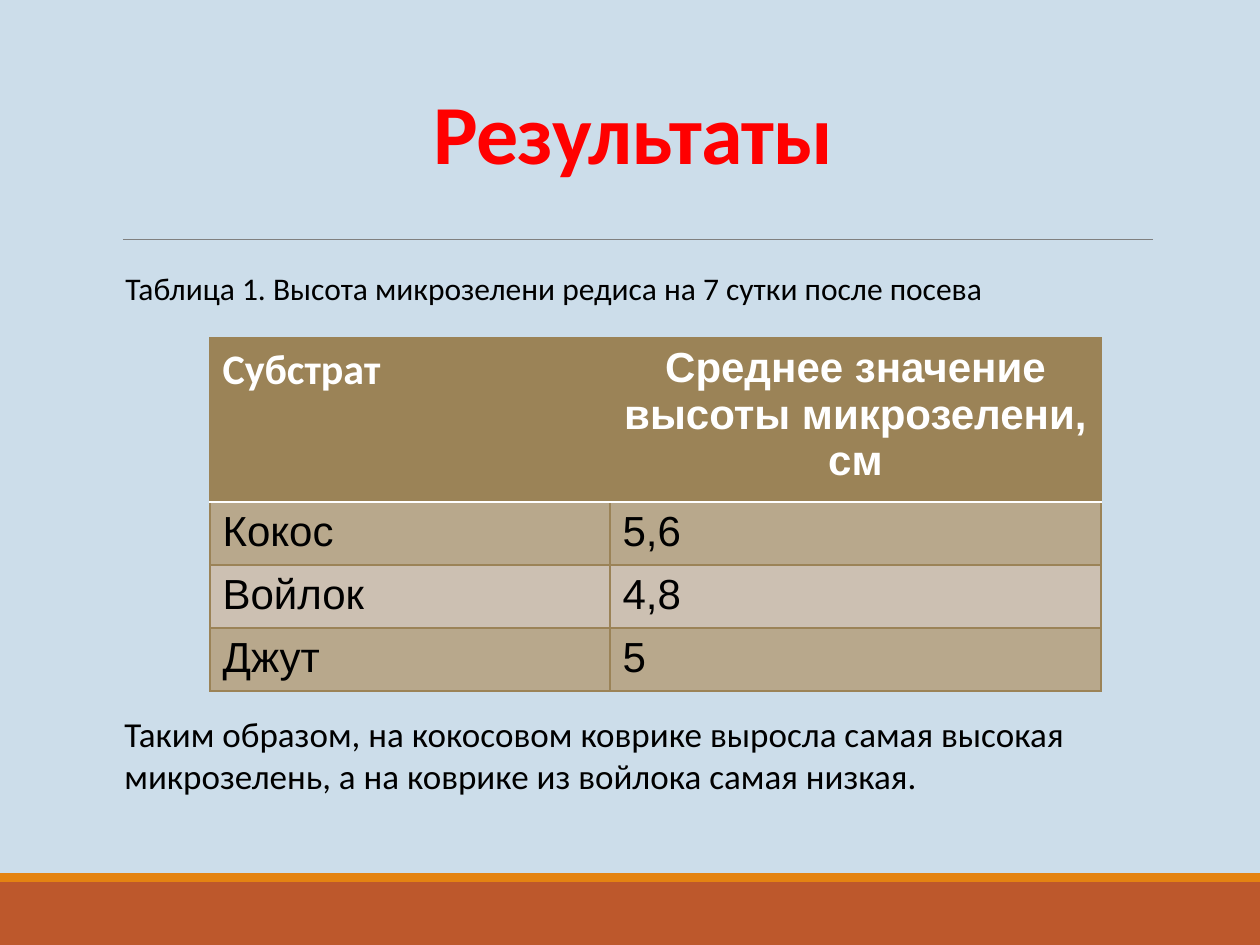
from dataclasses import dataclass

from lxml import etree
from pptx import Presentation
from pptx.dml.color import RGBColor
from pptx.enum.shapes import MSO_CONNECTOR, MSO_SHAPE
from pptx.enum.text import MSO_ANCHOR, PP_ALIGN
from pptx.oxml.ns import qn
from pptx.util import Emu, Pt

LEFT, CENTER = PP_ALIGN.LEFT, PP_ALIGN.CENTER
TOP, MIDDLE = MSO_ANCHOR.TOP, MSO_ANCHOR.MIDDLE
RECTANGLE, STRAIGHT = MSO_SHAPE.RECTANGLE, MSO_CONNECTOR.STRAIGHT
EMU_PER_PX = 914400 / 126
BROWN, WHITE, BLACK = "9B8357", "FFFFFF", "000000"
ROW_FILLS = ("B8A88C", "CCC0B2")


@dataclass
class Band:
    top: int
    height: int
    color: str


@dataclass
class Style:
    size: int
    font: str = "Calibri"
    color: str = BLACK
    bold: bool = False
    align: PP_ALIGN = LEFT


@dataclass
class Caption:
    left: int
    top: int
    width: int
    height: int
    text: str
    style: Style
    wrap: bool = True
    anchor: MSO_ANCHOR = TOP


BANDS = (Band(882, 63, "BD582C"), Band(873, 9, "E48312"))
TITLE = Caption(113, 39, 1040, 200, "Результаты",
                Style(48, color="FF0000", bold=True, align=CENTER), anchor=MIDDLE)
NOTES = (
    Caption(113, 263, 886, 50,
            "Таблица 1. Высота микрозелени редиса на 7 сутки после посева",
            Style(18), wrap=False),
    Caption(112, 706, 1086, 97,
            "Таким образом, на кокосовом коврике выросла самая высокая "
            "микрозелень, а на коврике из войлока самая низкая.", Style(20)),
)
HEADERS = (
    ("Субстрат", Style(24, color=WHITE, bold=True)),
    ("Среднее значение высоты микрозелени, см",
     Style(24, "Arial", WHITE, True, CENTER)),
)
RESULTS = (("Кокос", "5,6"), ("Войлок", "4,8"), ("Джут", "5"))
COLUMNS = (400, 491)
ROWS = (153, 60, 60, 60)


def px(value: int) -> Emu:
    return Emu(round(value * EMU_PER_PX))


def rgb(color: str) -> RGBColor:
    return RGBColor.from_string(color)


def add_span(para, text: str, style: Style):
    para.alignment = style.align
    span = para.add_run()
    span.text = text
    span.font.size = Pt(style.size)
    span.font.name = style.font
    span.font.bold = style.bold
    span.font.color.rgb = rgb(style.color)
    return span


def draw_band(page, band: Band) -> None:
    bar = page.shapes.add_shape(RECTANGLE, 0, px(band.top), px(1260), px(band.height))
    bar.shadow.inherit = False
    bar.fill.solid()
    bar.fill.fore_color.rgb = rgb(band.color)
    bar.line.fill.background()


def draw_rule(page) -> None:
    rule = page.shapes.add_connector(STRAIGHT, px(123), px(239), px(1153), px(239))
    rule.line.color.rgb = rgb("808080")
    rule.line.width = Pt(0.5)
    etree.SubElement(rule._element.spPr, qn("a:effectLst"))


def draw_caption(page, caption: Caption):
    box = page.shapes.add_textbox(px(caption.left), px(caption.top),
                                  px(caption.width), px(caption.height))
    frame = box.text_frame
    frame.word_wrap = caption.wrap
    frame.vertical_anchor = caption.anchor
    para = frame.paragraphs[0]
    return para, add_span(para, caption.text, caption.style)


def draw_title(page) -> None:
    para, span = draw_caption(page, TITLE)
    para.line_spacing = 0.85
    span.font._element.set("spc", "-50")


def set_border(cell, side: str, color: str, points: float) -> None:
    edge = etree.SubElement(cell._tc.get_or_add_tcPr(), qn(f"a:{side}"),
                            w=str(Pt(points)))
    fill = etree.SubElement(edge, qn("a:solidFill"))
    etree.SubElement(fill, qn("a:srgbClr"), val=color)


def fill_cell(cell, text: str, style: Style, color: str, borders: dict) -> None:
    add_span(cell.text_frame.paragraphs[0], text, style)
    for side, (line_color, points) in borders.items():
        set_border(cell, side, line_color, points)
    cell.fill.solid()
    cell.fill.fore_color.rgb = rgb(color)


def draw_table(page) -> None:
    table = page.shapes.add_table(len(ROWS), len(COLUMNS), px(210), px(338),
                                  px(sum(COLUMNS)), px(sum(ROWS))).table
    for column, width in zip(table.columns, COLUMNS):
        column.width = px(width)
    for row, height in zip(table.rows, ROWS):
        row.height = px(height)
    thin, divider = (BROWN, 1), (WHITE, 1.25)
    for index, (text, style) in enumerate(HEADERS):
        fill_cell(table.cell(0, index), text, style, BROWN,
                  {"lnL": thin, "lnR": thin, "lnT": thin, "lnB": divider})
    for row, values in enumerate(RESULTS, 1):
        borders = {"lnL": thin, "lnR": thin,
                   "lnT": divider if row == 1 else thin, "lnB": thin}
        for index, text in enumerate(values):
            fill_cell(table.cell(row, index), text, Style(24, "Arial"),
                      ROW_FILLS[(row - 1) % 2], borders)


def main() -> None:
    deck = Presentation()
    deck.slide_width, deck.slide_height = px(1260), px(945)
    page = deck.slides.add_slide(deck.slide_layouts[6])
    page.background.fill.solid()
    page.background.fill.fore_color.rgb = rgb("CCDDEA")
    for band in BANDS:
        draw_band(page, band)
    draw_rule(page)
    draw_title(page)
    draw_table(page)
    for note in NOTES:
        draw_caption(page, note)
    deck.save("out.pptx")


if __name__ == "__main__":
    main()
